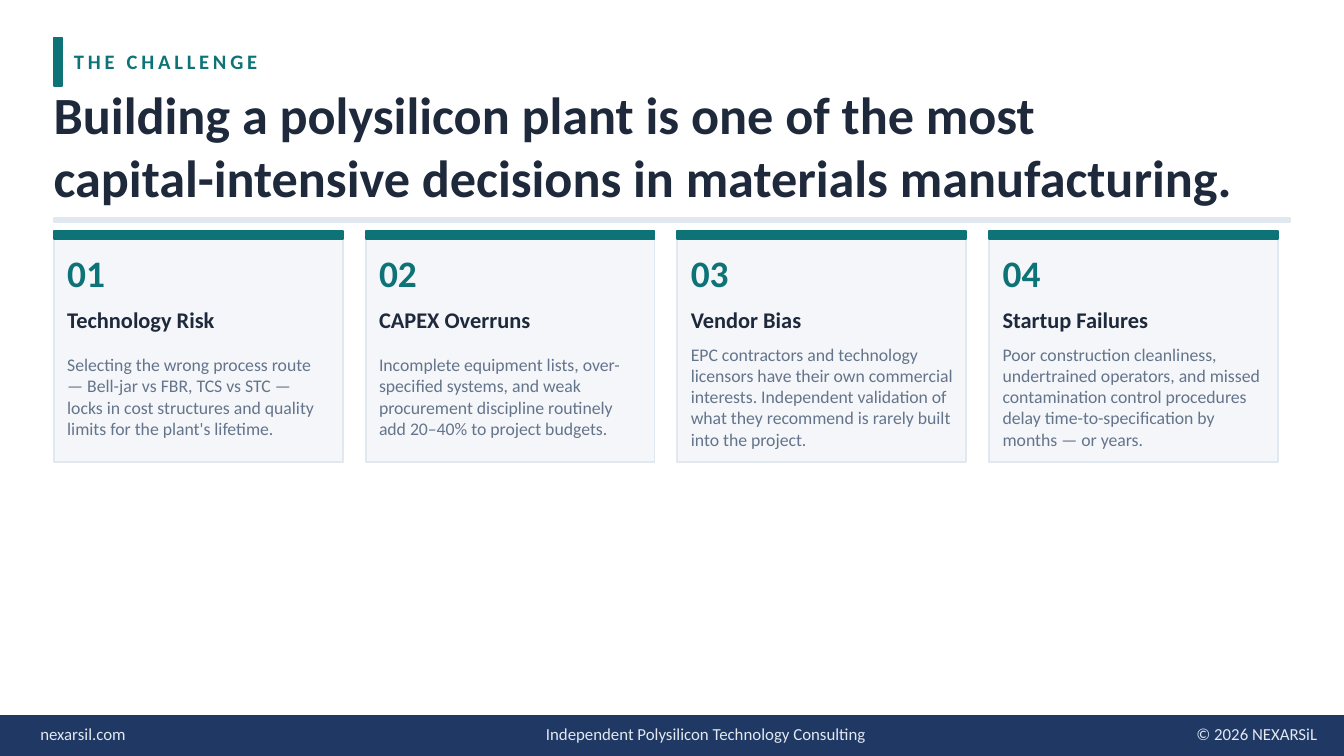
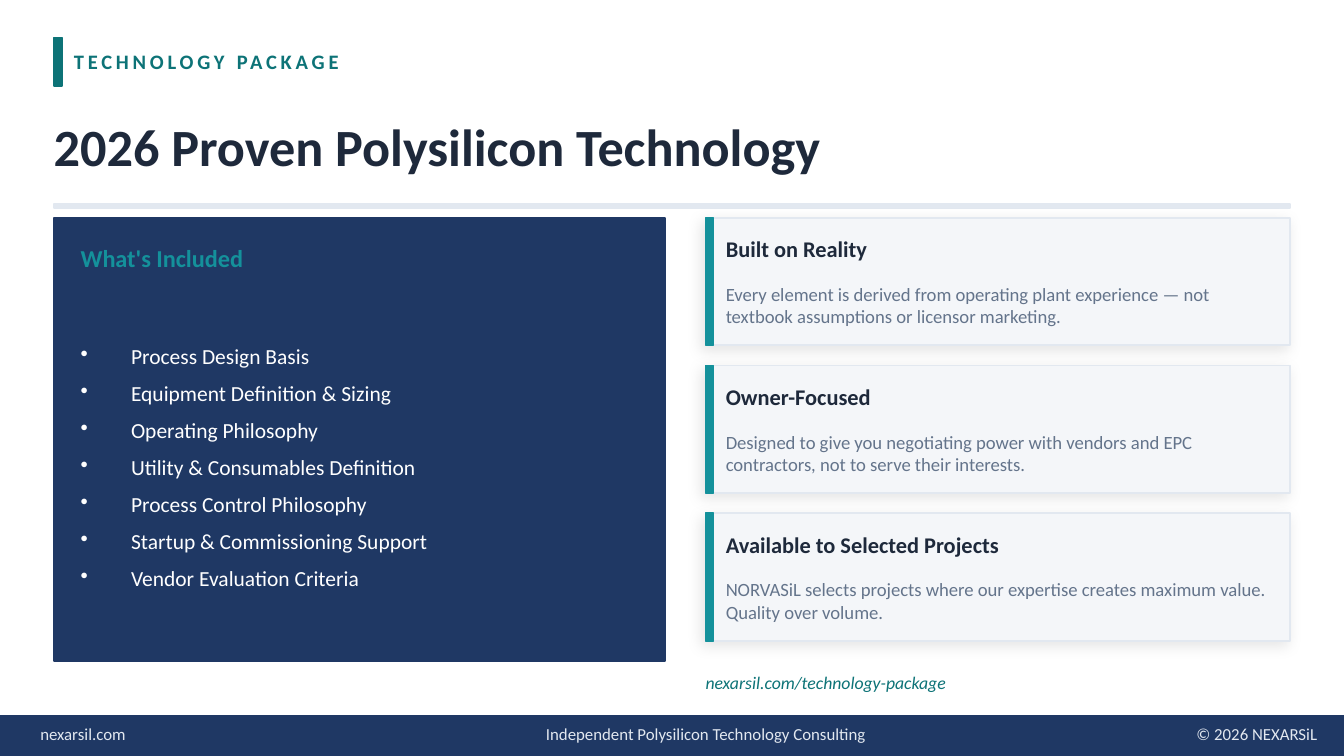
from typing import NamedTuple

from lxml.etree import SubElement
from pptx import Presentation
from pptx.dml.color import RGBColor
from pptx.enum.shapes import MSO_SHAPE
from pptx.enum.text import MSO_ANCHOR as Anchor, PP_ALIGN as Align
from pptx.oxml.ns import qn
from pptx.util import Pt

FONT = "Calibri"
COLORS = {
    "teal": "0D7377",
    "bright_teal": "14919B",
    "navy": "1F3864",
    "ink": "1E293B",
    "slate": "64748B",
    "rule": "E2E8F0",
    "card": "F4F6F9",
    "white": "FFFFFF",
}
MARGIN = 28.8
CONTENT_WIDTH = 662.4

CHALLENGES = [
    ("Technology Risk",
     "Selecting the wrong process route — Bell-jar vs FBR, TCS vs STC — locks in cost "
     "structures and quality limits for the plant's lifetime."),
    ("CAPEX Overruns",
     "Incomplete equipment lists, over-specified systems, and weak procurement discipline "
     "routinely add 20–40% to project budgets."),
    ("Vendor Bias",
     "EPC contractors and technology licensors have their own commercial interests. "
     "Independent validation of what they recommend is rarely built into the project."),
    ("Startup Failures",
     "Poor construction cleanliness, undertrained operators, and missed contamination control "
     "procedures delay time-to-specification by months — or years."),
]
INCLUDED = [
    "Process Design Basis",
    "Equipment Definition & Sizing",
    "Operating Philosophy",
    "Utility & Consumables Definition",
    "Process Control Philosophy",
    "Startup & Commissioning Support",
    "Vendor Evaluation Criteria",
]
BENEFITS = [
    ("Built on Reality",
     "Every element is derived from operating plant experience — not textbook assumptions "
     "or licensor marketing."),
    ("Owner-Focused",
     "Designed to give you negotiating power with vendors and EPC contractors, not to serve "
     "their interests."),
    ("Available to Selected Projects",
     "NORVASiL selects projects where our expertise creates maximum value. "
     "Quality over volume."),
]


class Box(NamedTuple):
    left: float
    top: float
    width: float
    height: float

    def inner(self, x, y, width, height):
        """Return a box placed relative to this one's top left corner."""
        return Box(self.left + x, self.top + y, width, height)

    def lengths(self):
        return [Pt(value) for value in self]


def color(name):
    return RGBColor.from_string(COLORS[name])


def add_rectangle(slide, box, fill, line=None):
    shape = slide.shapes.add_shape(MSO_SHAPE.RECTANGLE, *box.lengths())
    shape.shadow.inherit = False
    shape.fill.solid()
    shape.fill.fore_color.rgb = color(fill)
    shape.line.color.rgb = color(line or fill)
    shape.line.width = Pt(1)
    return shape


def add_soft_shadow(shape):
    effects = shape._element.spPr.find(qn("a:effectLst"))
    shadow = SubElement(effects, qn("a:outerShdw"), blurRad=str(Pt(8)), dist=str(Pt(3)),
                        dir=str(135 * 60000), algn="bl", rotWithShape="0")
    shade = SubElement(shadow, qn("a:srgbClr"), val="000000")
    SubElement(shade, qn("a:alpha"), val="10000")


def add_bullet(paragraph, indent):
    properties = paragraph._p.get_or_add_pPr()
    properties.set("marL", str(Pt(indent)))
    properties.set("indent", str(-Pt(indent)))
    SubElement(properties, qn("a:buChar"), char="•")
    paragraph.space_after = Pt(6)


def add_text(slide, box, text, size, ink, bold=False, italic=False,
             align=Align.LEFT, spacing=0, bullet_indent=0):
    text_frame = slide.shapes.add_textbox(*box.lengths()).text_frame
    text_frame.word_wrap = True
    text_frame.vertical_anchor = Anchor.MIDDLE
    text_frame.margin_left = text_frame.margin_right = 0
    text_frame.margin_top = text_frame.margin_bottom = 0
    text_frame.text = text
    for paragraph in text_frame.paragraphs:
        paragraph.alignment = align
        if bullet_indent:
            add_bullet(paragraph, bullet_indent)
        for run in paragraph.runs:
            font = run.font
            font.name, font.size = FONT, Pt(size)
            font.bold, font.italic = bold, italic
            font.color.rgb = color(ink)
            if spacing:
                run._r.get_or_add_rPr().set("spc", str(spacing * 100))


def add_header(slide, box, section, title, rule_offset):
    add_rectangle(slide, box.inner(0, 0, 4.32, 25.92), "teal")
    add_text(slide, box.inner(10.8, -1.44, 576, 28.8), section, 11, "teal",
             bold=True, spacing=2)
    add_text(slide, box.inner(0, 31.68, box.width, 51.84), title, 28, "ink", bold=True)
    add_rectangle(slide, box.inner(0, rule_offset, box.width, 2.16), "rule")


def add_footer(slide, box):
    add_rectangle(slide, box, "navy")
    entries = [
        (21.6, 216, "nexarsil.com", Align.LEFT),
        (216, 324, "Independent Polysilicon Technology Consulting", Align.CENTER),
        (518.4, 187.2, "© 2026 NEXARSiL", Align.RIGHT),
    ]
    for x, width, text, align in entries:
        add_text(slide, box.inner(x, 0, width, 18.72), text, 9, "rule", align=align)


def add_challenge_card(slide, box, number, heading, body):
    text_width = box.width - 14.4
    add_rectangle(slide, box, "card", "rule")
    add_rectangle(slide, box.inner(0, 0, box.width, 4.32), "teal")
    add_text(slide, box.inner(7.2, 7.2, 39.6, 30.24), f"{number:02}", 20, "teal", bold=True)
    add_text(slide, box.inner(7.2, 36, text_width, 23.04), heading, 12, "ink", bold=True)
    add_text(slide, box.inner(7.2, 59.04, text_width, 59.04), body, 9.5, "slate")


def add_included_panel(slide, box):
    text_width = box.width - 32.4
    add_rectangle(slide, box, "navy")
    add_text(slide, box.inner(14.4, 7.2, text_width, 28.8), "What's Included", 13,
             "bright_teal", bold=True)
    add_text(slide, box.inner(14.4, 41.76, text_width, 183.6), "\n".join(INCLUDED), 11.5,
             "white", bullet_indent=27)


def add_benefit_card(slide, box, heading, body):
    text_width = box.width - 21.6
    add_soft_shadow(add_rectangle(slide, box, "card", "rule"))
    add_rectangle(slide, box.inner(0, 0, 4.32, box.height), "bright_teal")
    add_text(slide, box.inner(10.8, 5.76, text_width, 21.6), heading, 12, "ink", bold=True)
    add_text(slide, box.inner(10.8, 28.8, text_width, 36), body, 10, "slate")


def add_page(presentation, section, title, rule_offset):
    """Add a blank slide with the shared header and footer."""
    slide = presentation.slides.add_slide(presentation.slide_layouts[6])
    slide.background.fill.solid()
    slide.background.fill.fore_color.rgb = color("white")
    add_header(slide, Box(MARGIN, 20.16, CONTENT_WIDTH, 100), section, title, rule_offset)
    add_footer(slide, Box(0, 383.76, 720, 21.6))
    return slide


def build_challenge_slide(presentation):
    slide = add_page(
        presentation, "THE CHALLENGE",
        "Building a polysilicon plant is one of the most\n"
        "capital-intensive decisions in materials manufacturing.", 96.48)
    first = Box(MARGIN, 123.84, 154.8, 123.84)
    for index, (heading, body) in enumerate(CHALLENGES):
        box = first.inner(index * 167.04, 0, first.width, first.height)
        add_challenge_card(slide, box, index + 1, heading, body)


def build_technology_slide(presentation):
    slide = add_page(presentation, "TECHNOLOGY PACKAGE",
                     "2026 Proven Polysilicon Technology", 89.28)
    add_included_panel(slide, Box(MARGIN, 116.64, 327.6, 237.6))
    column = Box(378, 116.64, 313.2, 257.76)
    for index, (heading, body) in enumerate(BENEFITS):
        box = column.inner(0, index * 79.2, column.width, 68.4)
        add_benefit_card(slide, box, heading, body)
    add_text(slide, column.inner(0, 239.76, column.width, 18),
             "nexarsil.com/technology-package", 9.5, "teal", italic=True)


def main():
    presentation = Presentation()
    presentation.slide_width, presentation.slide_height = Pt(720), Pt(405)
    build_challenge_slide(presentation)
    build_technology_slide(presentation)
    presentation.save("out.pptx")


if __name__ == "__main__":
    main()
